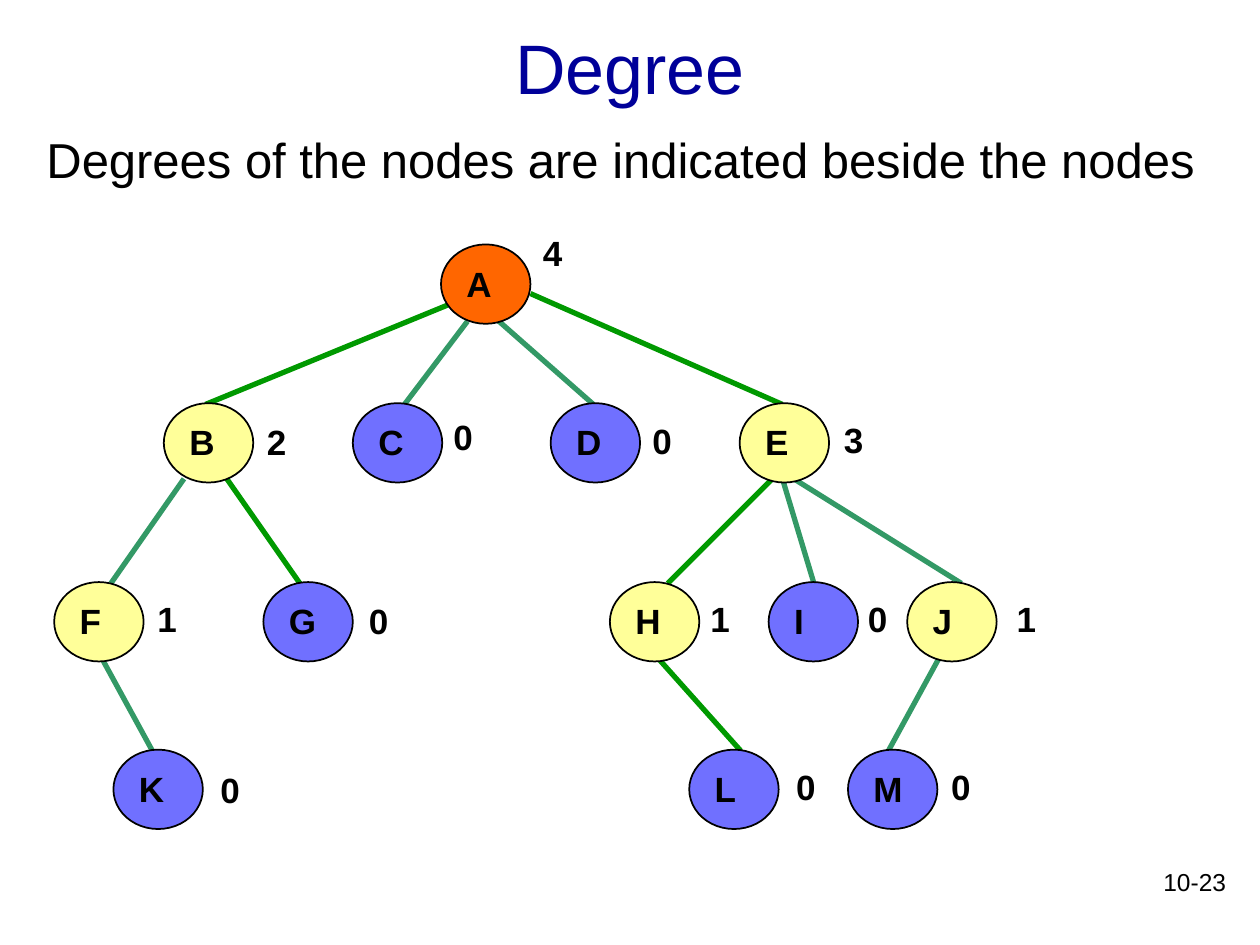
from pptx import Presentation
from pptx.dml.color import RGBColor
from pptx.enum.shapes import MSO_CONNECTOR, MSO_SHAPE
from pptx.enum.text import MSO_ANCHOR, PP_ALIGN
from pptx.oxml.xmlchemy import OxmlElement
from pptx.util import Inches, Pt

STRAIGHT = MSO_CONNECTOR.STRAIGHT
OVAL = MSO_SHAPE.OVAL
TOP, MIDDLE = MSO_ANCHOR.TOP, MSO_ANCHOR.MIDDLE
LEFT, CENTER, RIGHT = PP_ALIGN.LEFT, PP_ALIGN.CENTER, PP_ALIGN.RIGHT

FONT = "Arial"
BLACK, NAVY = "000000", "000099"
ORANGE, YELLOW, BLUE = "FF6600", "FFFF99", "7070FF"
GREEN, TEAL = "009900", "339966"

TREE_BOX = (0.43, 1.79, 7.9, 4.79)
NODE_WIDTH, NODE_HEIGHT = 0.71, 0.63
ROW_TOPS = [0.15, 1.41, 2.83, 4.16]

# letter, left, row, fill, degree, degree left, degree top
NODES = [
    ("A", 3.07, 0, ORANGE, "4", 3.78, 0),
    ("B", 0.87, 1, YELLOW, "2", 1.59, 1.5),
    ("C", 2.37, 1, BLUE, "0", 3.07, 1.46),
    ("D", 3.94, 1, BLUE, "0", 4.65, 1.49),
    ("E", 5.44, 1, YELLOW, "3", 6.17, 1.48),
    ("F", 0, 2, YELLOW, "1", 0.72, 2.9),
    ("G", 1.66, 2, BLUE, "0", 2.4, 2.92),
    ("H", 4.41, 2, YELLOW, "1", 5.11, 2.9),
    ("I", 5.67, 2, BLUE, "0", 6.36, 2.9),
    ("J", 6.77, 2, YELLOW, "1", 7.54, 2.9),
    ("K", 0.47, 3, BLUE, "0", 1.22, 4.26),
    ("L", 5.04, 3, BLUE, "0", 5.79, 4.24),
    ("M", 6.3, 3, BLUE, "0", 7.02, 4.24),
]

# start left, start top, end left, end row, colour
EDGES = [
    (3.28, 0.76, 2.78, 1, TEAL),
    (3.53, 0.76, 4.28, 1, TEAL),
    (3.15, 0.62, 1.2, 1, GREEN),
    (3.78, 0.54, 5.78, 1, GREEN),
    (1.03, 2.01, 0.45, 2, TEAL),
    (1.37, 2.01, 1.95, 2, GREEN),
    (5.7, 2.01, 4.87, 2, GREEN),
    (5.87, 2.01, 7.2, 2, TEAL),
    (5.78, 2.01, 6.03, 2, TEAL),
    (0.37, 3.42, 0.78, 3, TEAL),
    (4.78, 3.42, 5.45, 3, GREEN),
    (7.03, 3.42, 6.62, 3, TEAL),
]


def color(value):
    return RGBColor.from_string(value)


def write_text(shape, text, size, bold=False, fill=BLACK,
               alignment=LEFT, anchor=TOP, wrap=True):
    text_frame = shape.text_frame
    text_frame.text = text
    text_frame.word_wrap = wrap
    text_frame.vertical_anchor = anchor
    paragraph = text_frame.paragraphs[0]
    paragraph.alignment = alignment
    font = paragraph.runs[0].font
    font.name = FONT
    font.size = Pt(size)
    font.bold = bold
    font.color.rgb = color(fill)
    return paragraph


def add_text(slide, box, text, size, **style):
    shape = slide.shapes.add_textbox(*map(Inches, box))
    return write_text(shape, text, size, **style)


def add_edge(slide, start, end, line_color):
    edge = slide.shapes.add_connector(STRAIGHT, *map(Inches, start + end))
    edge.line.color.rgb = color(line_color)
    edge.line.width = Pt(3)
    edge._element.spPr.append(OxmlElement("a:effectLst"))


def add_node(slide, box, letter, fill):
    node = slide.shapes.add_shape(OVAL, *map(Inches, box))
    node.shadow.inherit = False
    node.fill.solid()
    node.fill.fore_color.rgb = color(fill)
    node.line.color.rgb = color(BLACK)
    node.line.width = Pt(1)
    write_text(node, letter, 20, bold=True)


def add_header(slide, title_box, subtitle_box):
    add_text(slide, title_box, "Degree", 40,
             fill=NAVY, alignment=CENTER, anchor=MIDDLE)
    paragraph = add_text(
        slide, subtitle_box,
        "Degrees of the nodes are indicated beside the nodes", 28)
    paragraph.space_before = Pt(3)


def add_tree(slide, box):
    left, top = box[:2]
    for start_x, start_y, end_x, row, line_color in EDGES:
        add_edge(slide, (left + start_x, top + start_y),
                 (left + end_x, top + ROW_TOPS[row] + 0.01), line_color)
    for letter, x, row, fill, degree, degree_x, degree_y in NODES:
        add_node(slide, (left + x, top + ROW_TOPS[row], NODE_WIDTH, NODE_HEIGHT),
                 letter, fill)
        add_text(slide, (left + degree_x, top + degree_y, 0.36, 0.44),
                 degree, 20, bold=True, wrap=False)


def add_page_number(slide, box):
    add_text(slide, box, "10-23", 14, alignment=RIGHT)


def main():
    presentation = Presentation()
    presentation.slide_width = Inches(10)
    presentation.slide_height = Inches(7.5)
    slide = presentation.slides.add_slide(presentation.slide_layouts[6])
    add_header(slide, (0.75, 0.17, 8.5, 0.72), (0.27, 0.98, 10.95, 0.59))
    add_tree(slide, TREE_BOX)
    add_page_number(slide, (7.75, 6.83, 2.08, 0.5))
    presentation.save("out.pptx")


if __name__ == "__main__":
    main()
